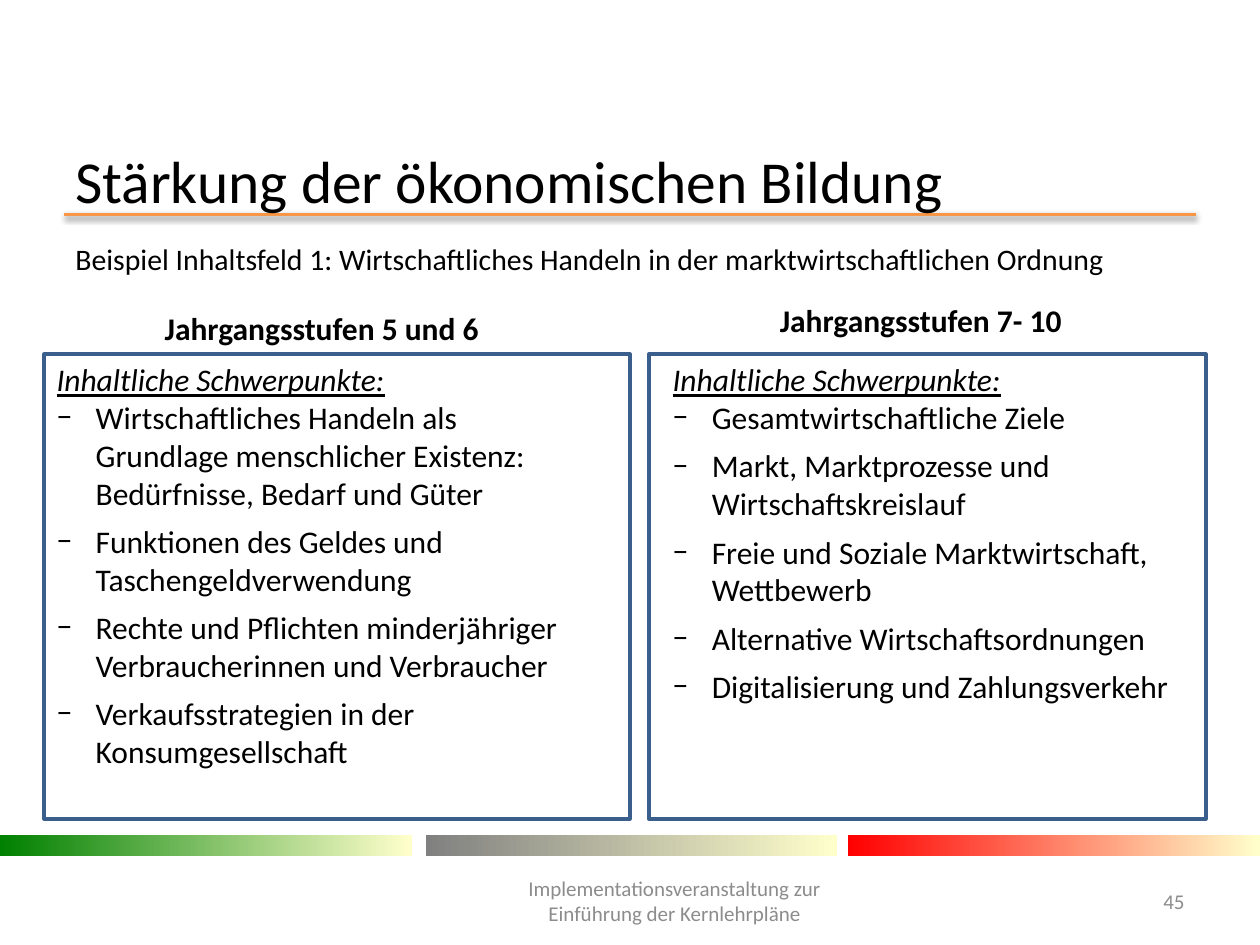
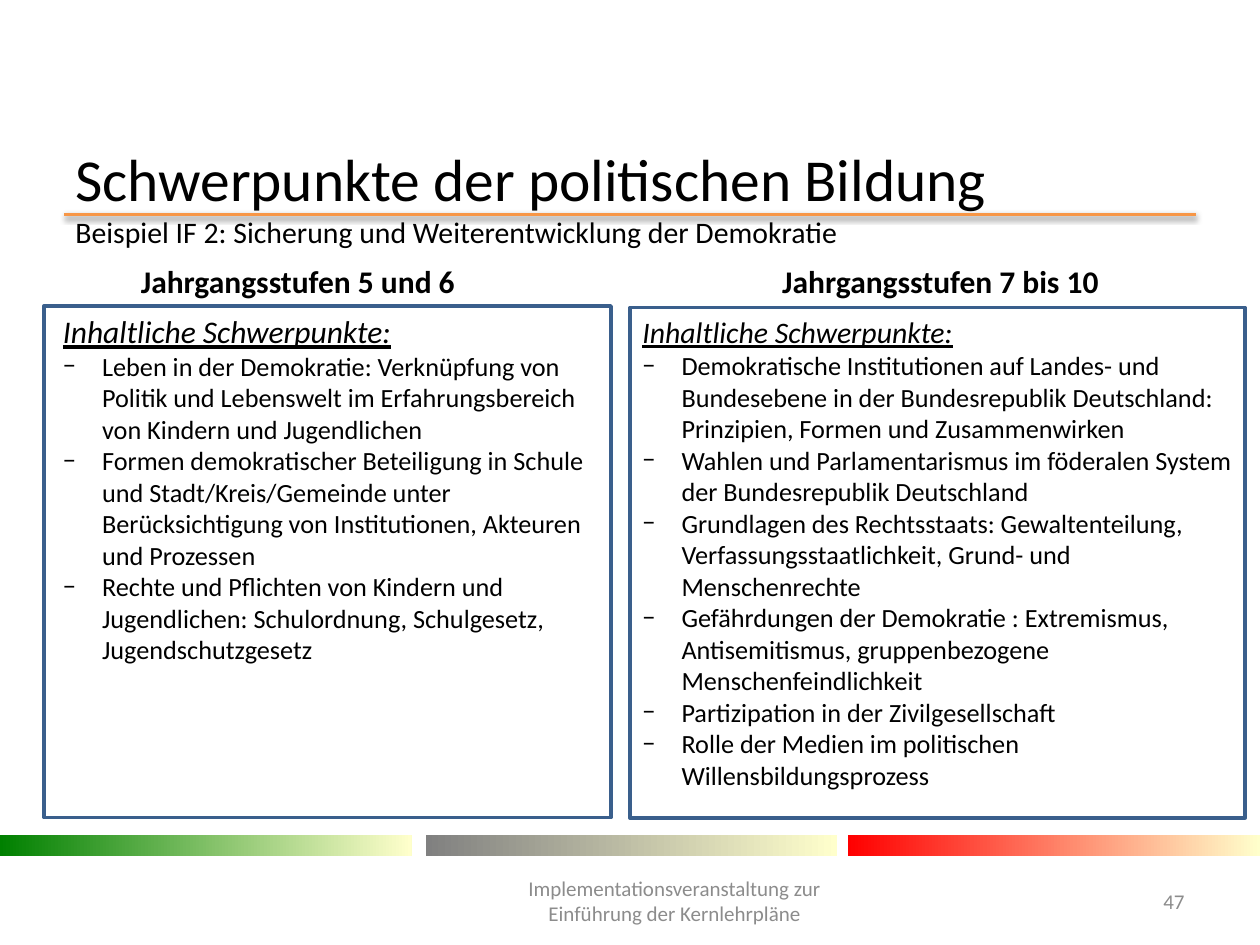
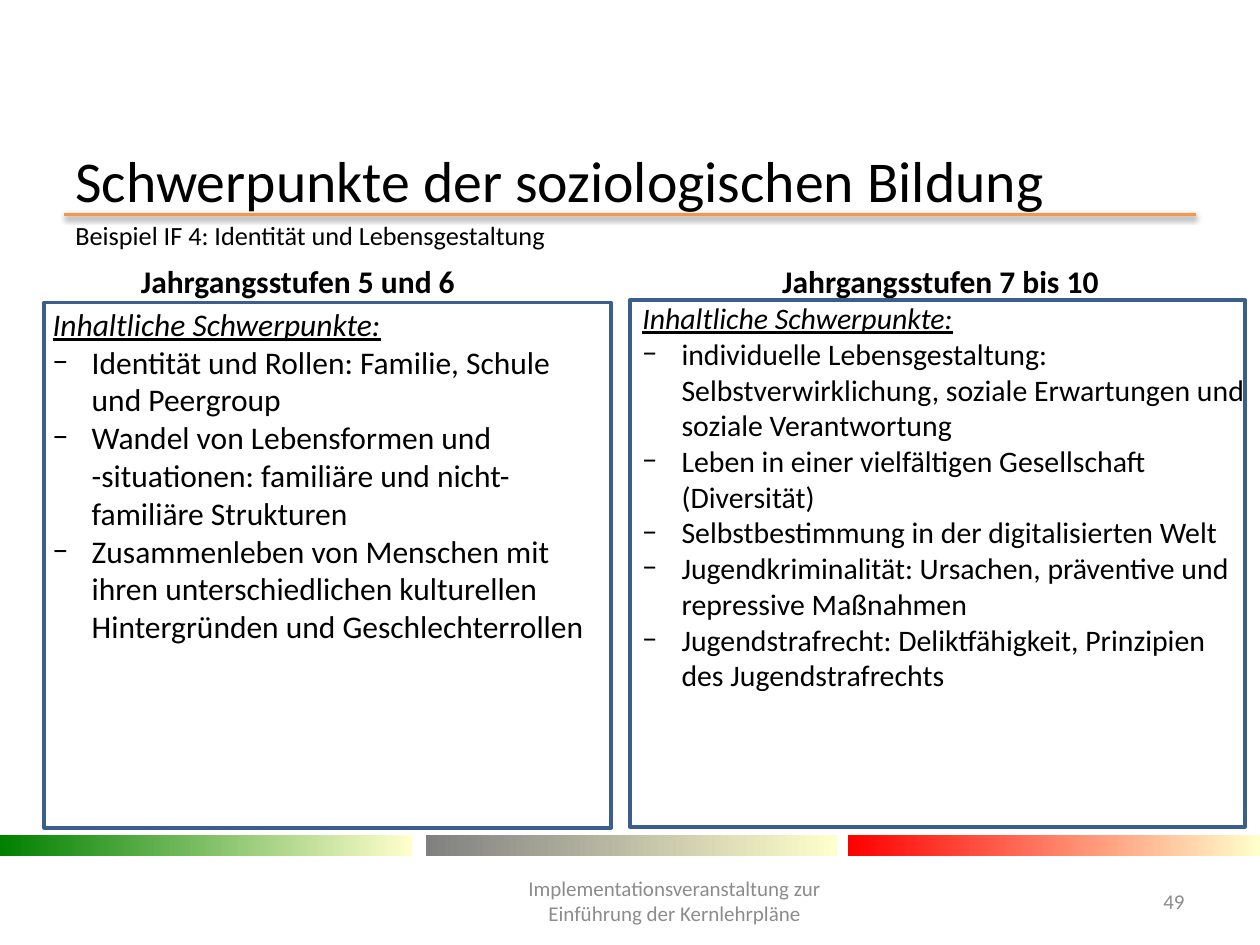
from dataclasses import dataclass

import lxml.etree
import pptx
import pptx.dml.color
import pptx.enum.shapes
import pptx.enum.text
import pptx.oxml.ns
import pptx.util

Cm = pptx.util.Cm
Pt = pptx.util.Pt
qn = pptx.oxml.ns.qn
ALIGN = pptx.enum.text.PP_ALIGN
ANCHOR = pptx.enum.text.MSO_ANCHOR
RECT = pptx.enum.shapes.MSO_SHAPE.RECTANGLE

FONT = "Calibri"
COLORS = {
    "text": "000000",
    "muted": "8C8C8C",
    "paper": "FFFFFF",
    "rule": "F79646",
    "frame": "3A5F8C",
    "green": "008000",
    "grey": "808080",
    "red": "FF0000",
    "pale": "FFFFCC",
}
BANDS = [(0, "green"), (8.58, "grey"), (17.1, "red")]
FOOTER = "Implementationsveranstaltung zur Einführung der Kernlehrpläne"
FOCUS = "Inhaltliche Schwerpunkte:"
INDENT = Cm(0.79)


@dataclass
class Column:
    heading: str
    heading_box: tuple
    frame_box: tuple
    text_box: tuple
    items: list
    focus_size: int = 18
    item_size: int = 18
    space_after: int = 0


def rgb(name):
    return pptx.dml.color.RGBColor.from_string(COLORS[name])


def add_run(p, text, size, color="text", bold=False, italic=False, underline=False):
    r = p.add_run()
    r.text = text
    r.font.name = FONT
    r.font.size = Pt(size)
    r.font.color.rgb = rgb(color)
    r.font.bold = bold
    r.font.italic = italic
    r.font.underline = underline


def add_box(s, box, anchor=ANCHOR.TOP, wrap=True):
    sp = s.shapes.add_textbox(*map(Cm, box))
    tf = sp.text_frame
    tf.word_wrap = wrap
    tf.vertical_anchor = anchor
    return sp


def add_label(s, box, text, size, color="text", bold=False,
              align=ALIGN.LEFT, anchor=ANCHOR.TOP, wrap=True):
    sp = add_box(s, box, anchor, wrap)
    p = sp.text_frame.paragraphs[0]
    p.alignment = align
    add_run(p, text, size, color, bold)
    return sp


def add_rule(s):
    line = s.shapes.add_connector(
        pptx.enum.shapes.MSO_CONNECTOR.STRAIGHT, Cm(1.3), Cm(4.32), Cm(24.1), Cm(4.32))
    line.line.color.rgb = rgb("rule")
    line.line.width = Pt(2)
    sp_pr = line._element.spPr
    effects = lxml.etree.SubElement(sp_pr, qn("a:effectLst"))
    shadow = lxml.etree.SubElement(
        effects, qn("a:outerShdw"), blurRad=str(Pt(3.1)), dist=str(Pt(1.6)),
        dir="5400000", rotWithShape="0")
    color = lxml.etree.SubElement(shadow, qn("a:srgbClr"), val=COLORS["text"])
    lxml.etree.SubElement(color, qn("a:alpha"), val="38000")


def add_band(s, left, color):
    sp = s.shapes.add_shape(RECT, Cm(left), Cm(16.84), Cm(8.3), Cm(0.41))
    sp.shadow.inherit = False
    sp.line.fill.background()
    sp.fill.gradient()
    sp.fill.gradient_angle = 0
    for stop, name in zip(sp.fill.gradient_stops, (color, "pale")):
        stop.color.rgb = rgb(name)


def add_frame(s, box):
    sp = s.shapes.add_shape(RECT, *map(Cm, box))
    sp.shadow.inherit = False
    sp.fill.background()
    sp.line.color.rgb = rgb("frame")
    sp.line.width = Pt(2)


def add_bullet(tf, text, size, space_after):
    p = tf.add_paragraph()
    p_pr = p._p.get_or_add_pPr()
    p_pr.set("marL", str(INDENT))
    p_pr.set("indent", str(-INDENT))
    lxml.etree.SubElement(p_pr, qn("a:buFont"), typeface=FONT)
    lxml.etree.SubElement(p_pr, qn("a:buChar"), char="−")
    p.space_after = Pt(space_after)
    for i, part in enumerate(text.split("\n")):
        if i:
            p.add_line_break()
        add_run(p, part, size)


def add_column(s, column):
    add_label(s, column.heading_box, column.heading, 18, bold=True, wrap=False)
    add_frame(s, column.frame_box)
    tf = add_box(s, column.text_box).text_frame
    add_run(tf.paragraphs[0], FOCUS, column.focus_size, italic=True, underline=True)
    for item in column.items:
        add_bullet(tf, item, column.item_size, column.space_after)


def add_slide(prs, number, title, title_box, title_size, columns):
    s = prs.slides.add_slide(prs.slide_layouts[6])
    add_rule(s)
    for left, color in BANDS:
        add_band(s, left, color)
    title_sp = add_label(s, title_box, title, title_size, anchor=ANCHOR.MIDDLE)
    for column in columns:
        add_column(s, column)
    add_label(s, (9.5, 17.65, 8.2, 1.02), FOOTER, 12, "muted",
              align=ALIGN.CENTER, anchor=ANCHOR.MIDDLE)
    add_label(s, (22.5, 17.65, 1.63, 1.02), str(number), 12, "muted",
              align=ALIGN.RIGHT, anchor=ANCHOR.MIDDLE)
    return s, title_sp


def add_economy(prs):
    lower = Column(
        "Jahrgangsstufen 5 und 6", (3.07, 6.1, 7.04, 1.02),
        (0.89, 7.14, 11.81, 9.37), (0.89, 7.14, 11.4, 8.59),
        ["Wirtschaftliches Handeln als Grundlage menschlicher Existenz: "
         "Bedürfnisse, Bedarf und Güter",
         "Funktionen des Geldes und Taschengeldverwendung",
         "Rechte und Pflichten minderjähriger Verbraucherinnen und Verbraucher",
         "Verkaufsstrategien in der Konsumgesellschaft"],
        space_after=6)
    upper = Column(
        "Jahrgangsstufen 7- 10", (15.47, 5.94, 6.25, 1.02),
        (13.08, 7.14, 11.23, 9.37), (13.31, 7.14, 10.59, 8.26),
        ["Gesamtwirtschaftliche Ziele",
         "Markt, Marktprozesse und Wirtschaftskreislauf",
         "Freie und Soziale Marktwirtschaft, Wettbewerb",
         "Alternative Wirtschaftsordnungen",
         "Digitalisierung und Zahlungsverkehr"],
        space_after=6)
    s, _ = add_slide(prs, 45, "Stärkung der ökonomischen Bildung",
                     (1.27, 3.12, 22.86, 0.99), 34, [lower, upper])
    sp = add_label(
        s, (1.27, 4.72, 22.86, 1.09),
        "Beispiel Inhaltsfeld 1: Wirtschaftliches Handeln in der "
        "marktwirtschaftlichen Ordnung", 17)
    sp.fill.solid()
    sp.fill.fore_color.rgb = rgb("paper")


def add_politics(prs):
    lower = Column(
        "Jahrgangsstufen 5 und 6", (2.59, 5.16, 6.91, 1.02),
        (0.89, 6.17, 11.43, 10.31), (1.02, 6.17, 11.2, 8.2),
        ["Leben in der Demokratie: Verknüpfung von Politik und Lebenswelt im "
         "Erfahrungsbereich von Kindern und Jugendlichen",
         "Formen demokratischer Beteiligung in Schule und Stadt/Kreis/Gemeinde "
         "unter Berücksichtigung von Institutionen, Akteuren und Prozessen",
         "Rechte und Pflichten von Kindern und Jugendlichen: Schulordnung, "
         "Schulgesetz, Jugendschutzgesetz"],
        item_size=15)
    upper = Column(
        "Jahrgangsstufen 7 bis 10", (15.52, 5.16, 6.96, 1.02),
        (12.7, 6.2, 12.4, 10.29), (12.7, 6.2, 12.67, 9.96),
        ["Demokratische Institutionen auf Landes- und Bundesebene in der "
         "Bundesrepublik Deutschland: Prinzipien, Formen und Zusammenwirken",
         "Wahlen und Parlamentarismus im föderalen System der Bundesrepublik "
         "Deutschland",
         "Grundlagen des Rechtsstaats: Gewaltenteilung, "
         "Verfassungsstaatlichkeit, Grund- und Menschenrechte",
         "Gefährdungen der Demokratie : Extremismus, Antisemitismus, "
         "gruppenbezogene Menschenfeindlichkeit",
         "Partizipation in der Zivilgesellschaft",
         "Rolle der Medien im politischen Willensbildungsprozess"],
        focus_size=17, item_size=15)
    _, title_sp = add_slide(prs, 47, "Schwerpunkte der politischen Bildung",
                            (1.27, 3.76, 22.86, 0.36), 34, [lower, upper])
    p = title_sp.text_frame.paragraphs[0]
    p.add_line_break()
    add_run(p, "Beispiel IF 2: Sicherung und Weiterentwicklung der Demokratie", 17)


def add_sociology(prs):
    lower = Column(
        "Jahrgangsstufen 5 und 6", (2.59, 5.16, 6.91, 1.02),
        (0.89, 6.1, 11.43, 10.59), (0.81, 6.02, 11.53, 7.19),
        ["Identität und Rollen: Familie, Schule und Peergroup",
         "Wandel von Lebensformen und\n-situationen: familiäre und "
         "nicht-familiäre Strukturen",
         "Zusammenleben von Menschen mit ihren unterschiedlichen kulturellen "
         "Hintergründen und Geschlechterrollen"])
    upper = Column(
        "Jahrgangsstufen 7 bis 10", (15.52, 5.16, 6.96, 1.02),
        (12.7, 6.05, 12.4, 10.62), (12.7, 5.92, 12.67, 8.26),
        ["individuelle Lebensgestaltung: Selbstverwirklichung, soziale "
         "Erwartungen und soziale Verantwortung",
         "Leben in einer vielfältigen Gesellschaft (Diversität)",
         "Selbstbestimmung in der digitalisierten Welt",
         "Jugendkriminalität: Ursachen, präventive und repressive Maßnahmen",
         "Jugendstrafrecht: Deliktfähigkeit, Prinzipien des Jugendstrafrechts"],
        focus_size=17, item_size=17)
    s, _ = add_slide(prs, 49, "Schwerpunkte der soziologischen Bildung",
                     (1.27, 3.12, 23.24, 0.99), 33, [lower, upper])
    add_label(s, (1.27, 4.29, 23.9, 0.89),
              "Beispiel IF 4: Identität und Lebensgestaltung", 15)


def main():
    prs = pptx.Presentation()
    prs.slide_width = Cm(25.4)
    prs.slide_height = Cm(19.05)
    add_economy(prs)
    add_politics(prs)
    add_sociology(prs)
    prs.save("out.pptx")


if __name__ == "__main__":
    main()
